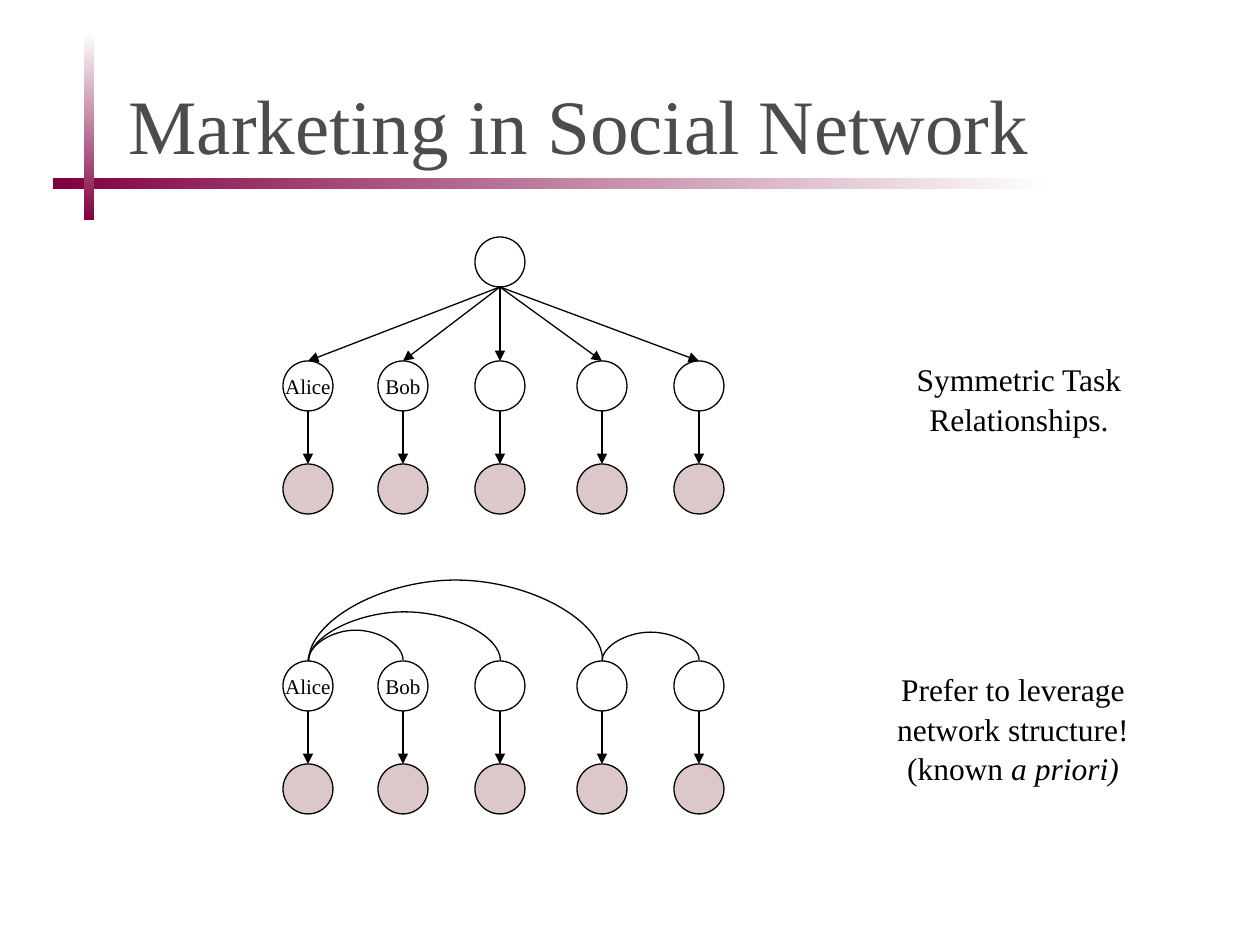
from lxml.etree import SubElement
from pptx import Presentation
from pptx.dml.color import RGBColor
from pptx.enum.shapes import MSO_CONNECTOR as Link, MSO_SHAPE as Shape
from pptx.enum.text import MSO_ANCHOR as Anchor, PP_ALIGN as Align
from pptx.oxml.ns import qn
from pptx.util import Emu, Pt

SCALE = 914400 / 126
BLACK = RGBColor(0x00, 0x00, 0x00)
WHITE = RGBColor(0xFF, 0xFF, 0xFF)
GREY = RGBColor(0x4C, 0x4C, 0x4C)
WINE = RGBColor(0x80, 0x00, 0x40)
ROSE = RGBColor(0xDC, 0xC8, 0xC8)

NODE = 50
COLUMNS = [308, 403, 500, 602, 699]
NAMES = ["Alice", "Bob", "", "", ""]
ROOT_TOP, TREE_TOP, NETWORK_TOP = 237, 361, 661
LEAF_DROP = 103
# First column, last column, height of the arc
ARCS = [(0, 1, 31), (0, 3, 82), (3, 4, 29), (0, 2, 50)]


def px(*lengths):
    return [Emu(round(length * SCALE)) for length in lengths]


class Painter:
    font = "Times New Roman"
    line_width = Pt(0.75)

    def __init__(self, page):
        self.page = page
        self.shapes = page.shapes

    def start_group(self):
        self.shapes = self.page.shapes.add_group_shape().shapes

    def end_group(self):
        self.shapes = self.page.shapes

    def style(self, para, size, color, align):
        para.alignment = align
        for span in para.runs:
            span.font.name = self.font
            span.font.size = Pt(size)
            span.font.color.rgb = color

    def bar(self, left, top, width, height, colors, angle):
        bar = self.shapes.add_shape(Shape.RECTANGLE, *px(left, top, width, height))
        bar.shadow.inherit = False
        bar.line.fill.background()
        bar.fill.gradient()
        bar.fill.gradient_angle = angle
        for stop, color, position in zip(bar.fill.gradient_stops, colors, (0, 1)):
            stop.color.rgb = color
            stop.position = position

    def text(self, left, top, width, height, lines, size, color=BLACK,
             align=Align.CENTER, anchor=Anchor.TOP):
        """Add a text box; each line is a list of (text, italic) pairs."""
        frame = self.shapes.add_textbox(*px(left, top, width, height)).text_frame
        frame.word_wrap = True
        frame.vertical_anchor = anchor
        for number, line in enumerate(lines):
            para = frame.add_paragraph() if number else frame.paragraphs[0]
            for words, italic in line:
                span = para.add_run()
                span.text = words
                span.font.italic = italic
            para.line_spacing = 1.05
            self.style(para, size, color, align)

    def node(self, center, top, name="", color=None):
        circle = self.shapes.add_shape(
            Shape.OVAL, *px(center - NODE // 2, top, NODE, NODE))
        circle.shadow.inherit = False
        circle.line.color.rgb = BLACK
        circle.line.width = self.line_width
        if color is None:
            circle.fill.background()
        else:
            circle.fill.solid()
            circle.fill.fore_color.rgb = color
        if name:
            frame = circle.text_frame
            frame.text = name
            frame.word_wrap = False
            frame.vertical_anchor = Anchor.MIDDLE
            self.style(frame.paragraphs[0], 12, BLACK, Align.CENTER)

    def connector(self, kind, *ends):
        connector = self.shapes.add_connector(kind, *px(*ends))
        connector.line.color.rgb = BLACK
        connector.line.width = self.line_width
        SubElement(connector._element.spPr, qn("a:effectLst"))
        return connector

    def arrow(self, *ends):
        properties = self.connector(Link.STRAIGHT, *ends)._element.spPr
        SubElement(properties.find(qn("a:ln")), qn("a:tailEnd"), type="triangle")

    def arc(self, start, end, base, height):
        """Bow a curved connector upwards: one px wide, turned a quarter."""
        middle, span = (start + end) // 2, end - start
        low = base + span // 2
        curve = self.connector(Link.CURVE, middle + 1, low, middle, low - span)
        properties = curve._element.spPr
        properties.find(qn("a:xfrm")).set("rot", "5400000")
        geometry = properties.find(qn("a:prstGeom"))
        guides = geometry.find(qn("a:avLst"))
        if guides is None:
            guides = SubElement(geometry, qn("a:avLst"))
        SubElement(guides, qn("a:gd"), name="adj1", fmla=f"val {height * 100000}")

    def people(self, top):
        """Add a row of people, each with an arrow to a shaded task."""
        for center, name in zip(COLUMNS, NAMES):
            self.node(center, top, name)
            self.node(center, top + LEAF_DROP, color=ROSE)
            self.arrow(center, top + NODE, center, top + LEAF_DROP)


def main():
    deck = Presentation()
    deck.slide_width, deck.slide_height = px(1260, 945)
    painter = Painter(deck.slides.add_slide(deck.slide_layouts[6]))

    painter.bar(53, 178, 998, 11, (WINE, WHITE), 0)
    painter.bar(84, 32, 10, 188, (WHITE, WINE), 270)
    painter.text(116, 42, 1050, 158, [[("Marketing in Social Network", None)]],
                 44, GREY, Align.LEFT, Anchor.MIDDLE)

    painter.start_group()
    painter.people(TREE_TOP)
    root = COLUMNS[2]
    painter.node(root, ROOT_TOP)
    for center in COLUMNS:
        painter.arrow(root, ROOT_TOP + NODE, center, TREE_TOP)

    painter.start_group()
    painter.people(NETWORK_TOP)
    for first, last, height in ARCS:
        painter.arc(COLUMNS[first], COLUMNS[last], NETWORK_TOP, height)
    painter.end_group()

    painter.text(851, 352, 336, 89, [[("Symmetric Task Relationships.", None)]], 18)
    painter.text(882, 662, 262, 127, [
        [("Prefer to leverage network structure!", None)],
        [("(known ", None), ("a priori)", True)],
    ], 18)
    deck.save("out.pptx")


if __name__ == "__main__":
    main()
